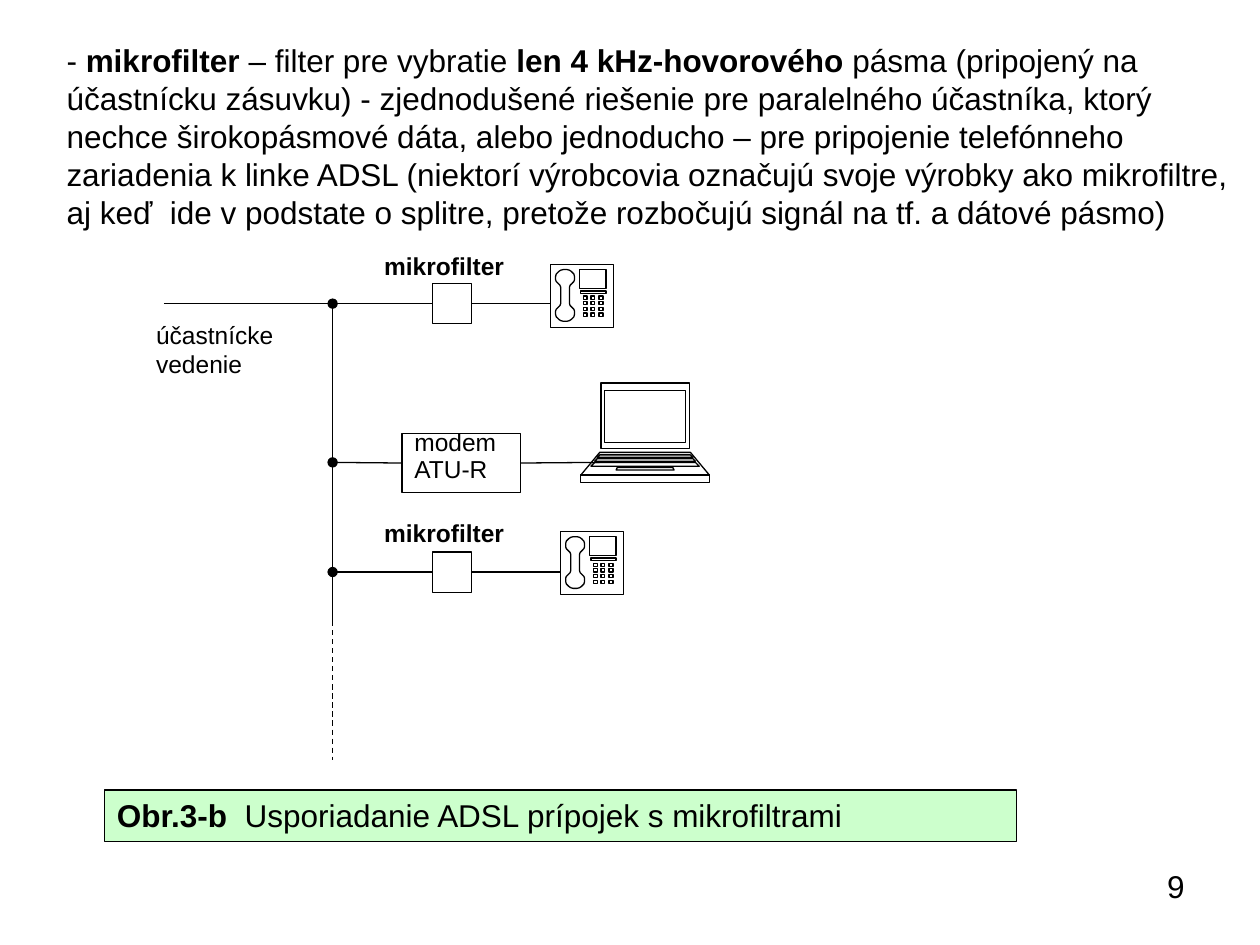
"""Build the slide on ADSL connections with microfilters."""
from dataclasses import dataclass
from itertools import product
from typing import Optional

from lxml.etree import SubElement
from pptx import Presentation
from pptx.dml.color import RGBColor
from pptx.enum.dml import MSO_LINE_DASH_STYLE as Dash
from pptx.enum.shapes import MSO_CONNECTOR as Connector, MSO_SHAPE as Preset
from pptx.enum.text import MSO_ANCHOR as Anchor, PP_ALIGN as Align
from pptx.oxml.ns import qn
from pptx.util import Inches, Pt

COLORS = {"ink": "000000", "caption": "CCFFCC"}
CELL = Inches(0.1)
COLUMNS, ROWS = 100, 75
TOP, LEFT, BOTTOM, RIGHT = range(4)
BUS = 26.4

Point = tuple[float, float]
Contour = list[Point]
Run = tuple[str, bool]


@dataclass(frozen=True)
class Box:
    col: float
    row: float
    cols: float
    rows: float

    def emu(self) -> list[int]:
        return [round(n * CELL) for n in (self.col, self.row, self.cols, self.rows)]


@dataclass(frozen=True)
class Branch:
    device: Box
    start: Point
    end: Point
    dotted: bool


BRANCHES = [
    Branch(Box(34.3, 22.5, 3.1, 3.2), (13, 24.1), (43.7, 24.1), False),
    Branch(Box(31.9, 34.4, 9.4, 4.7), (BUS, 36.7), (47.6, 36.7), True),
    Branch(Box(34.3, 43.8, 3.1, 3.2), (BUS, 45.4), (44.5, 45.4), True),
]
PHONES = [(43.7, 21), (44.5, 42.2)]
FILTER_LABELS = [Box(29.5, 19.4, 14.2, 3.3), Box(29.5, 40.6, 14.2, 3.3)]

HANDSET_QUARTER = [(7, 13), (8, 16), (11, 19), (14, 22), (15, 25), (15, 30),
                   (14, 34), (10, 38), (7, 40), (3, 41)]
LAPTOP_BANDS = [(35, 35, 0, 52), (36, 51, 55, 73), (51, 51, 73, 79),
                (32, 32, 6, 47), (36, 38, 57, 59), (22, 23, 67, 69),
                (38, 40, 60, 62), (40, 43, 63, 66)]


def rgb(name: str) -> RGBColor:
    return RGBColor.from_string(COLORS[name])


def write(frame, paragraphs: list[list[Run]], *, size: float = 14,
          align: Align = Align.LEFT, spacing: Optional[float] = None) -> None:
    frame.word_wrap = True
    frame.vertical_anchor = Anchor.TOP
    for index, runs in enumerate(paragraphs):
        paragraph = frame.add_paragraph() if index else frame.paragraphs[0]
        paragraph.alignment = align
        paragraph.line_spacing = spacing
        if index:
            paragraph.space_before = Pt(size / 2)
        for text, bold in runs:
            run = paragraph.add_run()
            run.text = text
            font = run.font
            font.name, font.size, font.bold = "Arial", Pt(size), bold
            font.color.rgb = rgb("ink")


def add_text(slide, box: Box, paragraphs: list[list[Run]], **style) -> None:
    write(slide.shapes.add_textbox(*box.emu()).text_frame, paragraphs, **style)


def outline(shape, fill: Optional[str] = None) -> None:
    shape.shadow.inherit = False
    shape.line.color.rgb = rgb("ink")
    shape.line.width = Pt(0.75)
    if fill:
        shape.fill.solid()
        shape.fill.fore_color.rgb = rgb(fill)
    else:
        shape.fill.background()


def add_rectangle(slide, box: Box, fill: Optional[str] = None):
    rectangle = slide.shapes.add_shape(Preset.RECTANGLE, *box.emu())
    outline(rectangle, fill)
    return rectangle


def add_line(slide, start: Point, end: Point, *, dotted: bool = False,
             dashed: bool = False):
    ends = [round(n * CELL) for n in (*start, *end)]
    wire = slide.shapes.add_connector(Connector.STRAIGHT, *ends)
    wire.line.color.rgb = rgb("ink")
    wire.line.width = Pt(0.75)
    if dashed:
        wire.line.dash_style = Dash.DASH
    if dotted:
        SubElement(wire.line._get_or_add_ln(), qn("a:headEnd"), type="oval")
    SubElement(wire._element.spPr, qn("a:effectLst"))
    return wire


def add_branch(slide, branch: Branch) -> None:
    device = add_rectangle(slide, branch.device)
    incoming = add_line(slide, branch.start, branch.end, dotted=branch.dotted)
    incoming.end_connect(device, LEFT)
    add_line(slide, branch.start, branch.end).begin_connect(device, RIGHT)


def add_drawing(slide, origin: Point, contours: list[Contour], unit: int) -> None:
    first, *others = contours
    builder = slide.shapes.build_freeform(*first[0], scale=unit)
    builder.add_line_segments(first[1:], close=True)
    for contour in others:
        builder.move_to(*contour[0])
        builder.add_line_segments(contour[1:], close=True)
    outline(builder.convert_to_shape(*(round(n * CELL) for n in origin)))


def band(top: Point, bottom: Point, y1: float, y2: float) -> Contour:
    return [(top[0], y1), (top[1], y1), (bottom[1], y2), (bottom[0], y2)]


def rect(x: float, y: float, width: float, height: float) -> Contour:
    return band((x, x + width), (x, x + width), y, y + height)


def phone_contours() -> list[Contour]:
    half = HANDSET_QUARTER + [(-x, y) for x, y in reversed(HANDSET_QUARTER)]
    handset = [(23 + x, 49 + y) for x, y in half + [(-x, -y) for x, y in half]]
    keys = [rect(52 + 12.5 * col, 50 + 9 * row, 6, 5)
            for row, col in product(range(4), range(3))]
    return [rect(0, 0, 100, 100), handset, rect(46, 8, 42, 30),
            rect(48, 42, 40, 4), *keys]


def laptop_contours(center: float = 51) -> list[Contour]:
    return [band((center - top, center + top), (center - bottom, center + bottom), y1, y2)
            for top, bottom, y1, y2 in LAPTOP_BANDS]


def main() -> None:
    deck = Presentation()
    deck.slide_width, deck.slide_height = COLUMNS * CELL, ROWS * CELL
    slide = deck.slides.add_slide(deck.slide_layouts[6])

    add_text(slide, Box(71.7, 68.3, 23.3, 5.2), [[("9", False)]],
             size=18, align=Align.RIGHT)
    add_text(slide, Box(4.3, 2.8, 95.7, 16), [[
        ("- ", False), ("mikrofilter", True), (" – filter pre vybratie ", False),
        ("len 4 kHz-hovorového", True),
        (" pásma (pripojený na účastnícku zásuvku) - zjednodušené riešenie pre "
         "paralelného účastníka, ktorý nechce širokopásmové dáta, alebo jednoducho – "
         "pre pripojenie telefónneho zariadenia k linke ADSL (niektorí výrobcovia "
         "označujú svoje výrobky ako mikrofiltre, aj keď  ide v podstate o splitre, "
         "pretože rozbočujú signál na tf. a dátové pásmo)", False)]], size=18)

    add_line(slide, (BUS, 24.1), (BUS, 49.3), dotted=True)
    add_line(slide, (BUS, 49.3), (BUS, 60.3), dashed=True)
    for branch in BRANCHES:
        add_branch(slide, branch)
    add_text(slide, Box(31.9, 34.4, 10.2, 4.5),
             [[("modem", False)], [("ATU-R", False)]], spacing=0.5)

    for corner in PHONES:
        add_drawing(slide, corner, phone_contours(), CELL // 20)
    add_drawing(slide, (46.1, 30.4), laptop_contours(), CELL // 10)

    for label in FILTER_LABELS:
        add_text(slide, label, [[("mikrofilter", True)]])
    add_text(slide, Box(11.4, 24.9, 14.2, 5.7), [[("účastnícke vedenie", False)]])

    caption = add_rectangle(slide, Box(8.3, 62.7, 72.4, 4.1), "caption")
    write(caption.text_frame, [[
        ("Obr.3-b  ", True),
        ("Usporiadanie ADSL prípojek s mikrofiltrami", False)]], size=18)
    deck.save("out.pptx")


if __name__ == "__main__":
    main()
